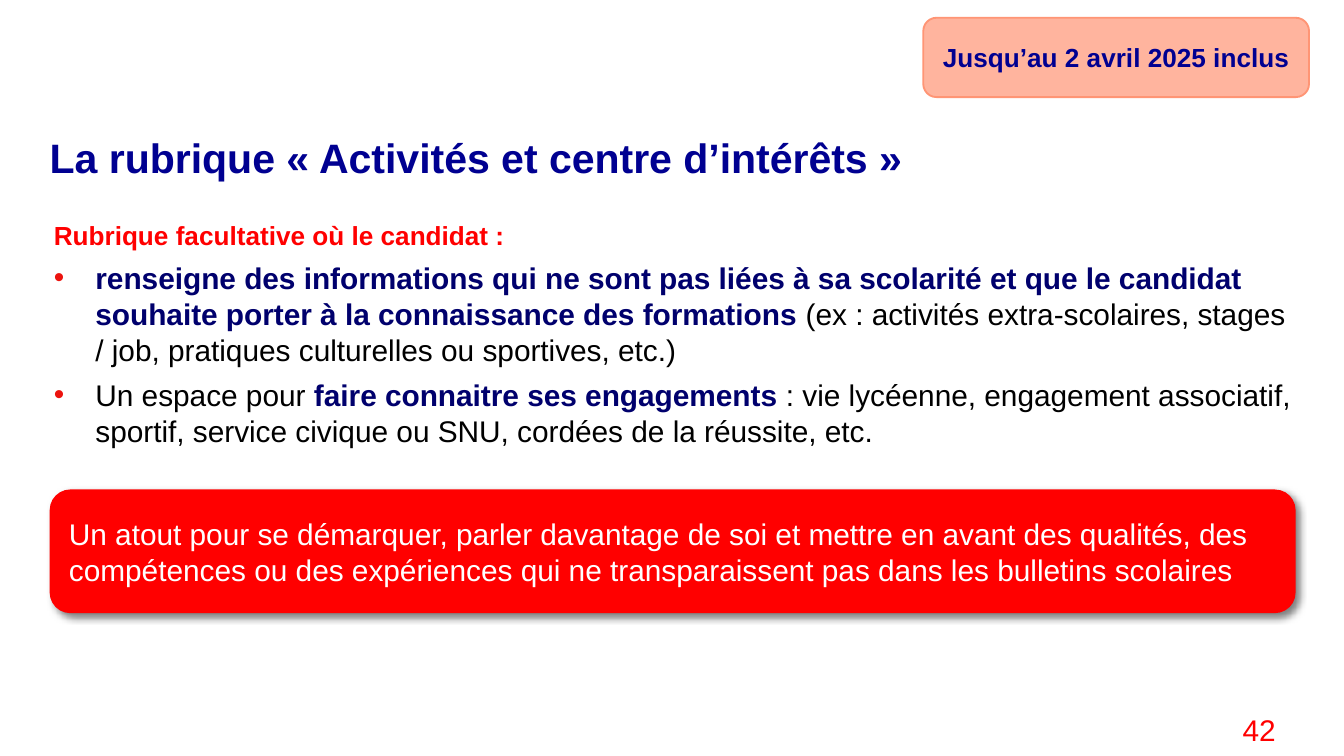
from lxml import etree
from pptx import Presentation
from pptx.dml.color import RGBColor
from pptx.enum.shapes import MSO_SHAPE
from pptx.enum.text import MSO_ANCHOR, PP_ALIGN
from pptx.oxml.ns import qn
from pptx.util import Inches, Pt

WIDTH = Inches(10)
HEIGHT = WIDTH * 9 // 16
NAVY, DARK_NAVY, RED, BULLET_RED = "000091", "00006D", "FF0000", "EC130E"
SALMON, BLACK, WHITE = "FF9575", "000000", "FFFFFF"


def color(value):
    return RGBColor.from_string(value)


def share(left, top, width, height):
    return (round(WIDTH * left / 100), round(HEIGHT * top / 100),
            round(WIDTH * width / 100), round(HEIGHT * height / 100))


def style(font, size, value, bold=False):
    font.name = "Arial"
    font.size = Pt(size)
    font.bold = bold
    font.color.rgb = color(value)


def write(paragraph, text, size, value, bold=False, align=PP_ALIGN.LEFT):
    paragraph.text = text
    paragraph.alignment = align
    style(paragraph.runs[0].font, size, value, bold)


def add_text_frame(slide, box, inset=0):
    frame = slide.shapes.add_textbox(*box).text_frame
    frame.word_wrap = True
    frame.margin_left = frame.margin_right = Inches(inset)
    frame.margin_top = frame.margin_bottom = Inches(inset / 2)
    return frame


def add_bullet(paragraph):
    properties = paragraph._p.get_or_add_pPr()
    properties.set("marL", str(Inches(0.31)))
    properties.set("indent", str(-Inches(0.31)))
    bullet_color = etree.SubElement(properties, qn("a:buClr"))
    etree.SubElement(bullet_color, qn("a:srgbClr"), val=BULLET_RED)
    etree.SubElement(properties, qn("a:buFont"), typeface="Arial")
    etree.SubElement(properties, qn("a:buChar"), char="•")


def add_rounded_box(slide, box, fill, text, size, text_color, bold, align):
    shape = slide.shapes.add_shape(MSO_SHAPE.ROUNDED_RECTANGLE, *box)
    shape.shadow.inherit = False
    shape.fill.solid()
    shape.fill.fore_color.rgb = color(fill)
    shape.line.fill.background()
    frame = shape.text_frame
    frame.word_wrap = True
    frame.vertical_anchor = MSO_ANCHOR.MIDDLE
    write(frame.paragraphs[0], text, size, text_color, bold, align)
    return shape


def add_title(slide, box):
    paragraph = add_text_frame(slide, box).paragraphs[0]
    write(paragraph, "La rubrique « Activités et centre d’intérêts »", 22, NAVY, True)
    paragraph.line_spacing = 0.9


def add_body(slide, box):
    frame = add_text_frame(slide, box)
    heading = frame.paragraphs[0]
    write(heading, "Rubrique facultative où le candidat :", 14, RED, True)
    heading.space_after = Pt(5)
    items = [
        [("renseigne des informations qui ne sont pas liées à sa scolarité et que le candidat "
          "souhaite porter à la connaissance des formations ", True),
         ("(ex : activités extra-scolaires, stages / job, pratiques culturelles ou sportives, "
          "etc.)", False)],
        [("Un espace pour ", False),
         ("faire connaitre ses engagements ", True),
         (": vie lycéenne, engagement associatif, sportif, service civique ou SNU, cordées de "
          "la réussite, etc.", False)],
    ]
    for item in items:
        paragraph = frame.add_paragraph()
        add_bullet(paragraph)
        paragraph.space_after = Pt(5)
        for text, strong in item:
            run = paragraph.add_run()
            run.text = text
            style(run.font, 16, DARK_NAVY if strong else BLACK, strong)


def add_page_number(slide, box):
    frame = add_text_frame(slide, box, 0.1)
    frame.vertical_anchor = MSO_ANCHOR.MIDDLE
    write(frame.paragraphs[0], "42", 16, RED, align=PP_ALIGN.RIGHT)


def add_key_message(slide, box):
    shape = add_rounded_box(
        slide, box, RED,
        "Un atout pour se démarquer, parler davantage de soi et mettre en avant des qualités, "
        "des compétences ou des expériences qui ne transparaissent pas dans les bulletins "
        "scolaires", 16, WHITE, False, PP_ALIGN.LEFT)
    effects = shape._element.spPr.find(qn("a:effectLst"))
    shadow = etree.SubElement(effects, qn("a:outerShdw"), blurRad=str(Pt(4)), dist=str(Pt(3)),
                              dir=str(45 * 60000), algn="tl", rotWithShape="0")
    shadow_color = etree.SubElement(shadow, qn("a:srgbClr"), val=BLACK)
    etree.SubElement(shadow_color, qn("a:alpha"), val="50000")


def add_deadline(slide, box):
    shape = add_rounded_box(slide, box, SALMON, "Jusqu’au 2 avril 2025 inclus",
                            14, NAVY, True, PP_ALIGN.CENTER)
    fill_color = shape._element.spPr.find(qn("a:solidFill")).find(qn("a:srgbClr"))
    etree.SubElement(fill_color, qn("a:alpha"), val="70000")
    shape.line.color.rgb = color(SALMON)
    shape.line.width = Pt(1)


def main():
    presentation = Presentation()
    presentation.slide_width, presentation.slide_height = WIDTH, HEIGHT
    slide = presentation.slides.add_slide(presentation.slide_layouts[6])
    add_title(slide, share(3.7, 18.31, 92.1, 14.04))
    add_body(slide, share(4, 28.98, 92.1, 53.87))
    add_page_number(slide, share(83.1, 92.98, 12.8, 6.93))
    add_key_message(slide, share(3.7, 64.75, 92.7, 16.36))
    add_deadline(slide, share(68.7, 2.35, 28.7, 10.49))
    presentation.save("out.pptx")


if __name__ == "__main__":
    main()
